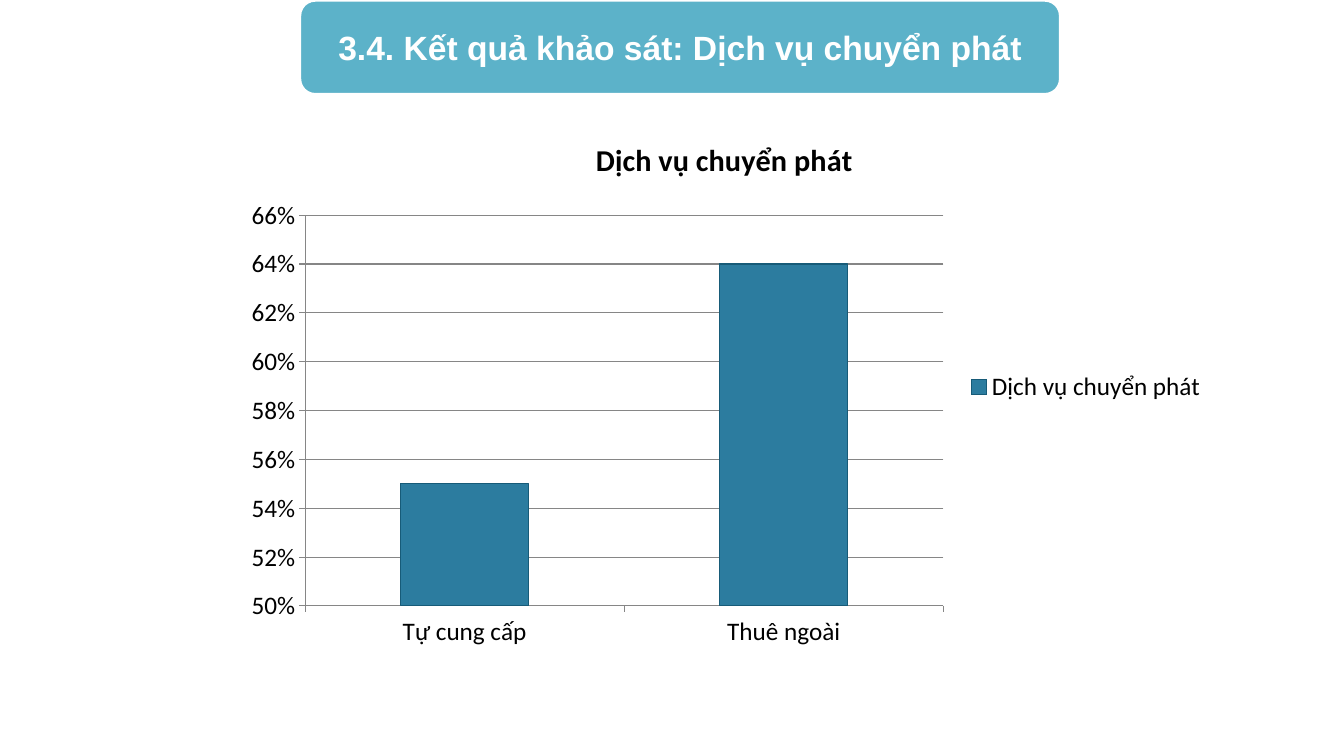
from pptx import Presentation
from pptx.chart.data import CategoryChartData
from pptx.dml.color import RGBColor
from pptx.enum.chart import XL_CHART_TYPE as ChartType, XL_LEGEND_POSITION as LegendPosition
from pptx.enum.chart import XL_TICK_MARK as TickMark
from pptx.enum.shapes import MSO_SHAPE as Shape
from pptx.enum.text import MSO_ANCHOR as Anchor, PP_ALIGN as Align
from pptx.util import Inches, Pt

# Content
HEADING = "3.4. Kết quả khảo sát: Dịch vụ chuyển phát"
SERVICE = "Dịch vụ chuyển phát"
SHARES = {"Tự cung cấp": 0.55, "Thuê ngoài": 0.64}
COLORS = {"banner": "5CB2C9", "white": "FFFFFF", "text": "000000",
          "bar": "2C7C9F", "bar_edge": "175B78", "axis": "868686"}
BANNER_AT = (2.97, 0, 7.55, 0.94)
CHART_AT = (2.3, 1.16, 9.77, 5.36)


def color(name):
    return RGBColor.from_string(COLORS[name])


def set_line(line, name, width):
    line.color.rgb = color(name)
    line.width = Pt(width)


def set_font(font, face, size, name, bold=False):
    font.name, font.size, font.bold = face, Pt(size), bold
    font.color.rgb = color(name)


deck = Presentation()
deck.slide_width, deck.slide_height = Inches(13.33), Inches(7.5)
page = deck.slides.add_slide(deck.slide_layouts[6])

# Heading banner
banner = page.shapes.add_shape(Shape.ROUNDED_RECTANGLE, *map(Inches, BANNER_AT))
banner.shadow.inherit = False
banner.fill.solid()
banner.fill.fore_color.rgb = color("banner")
set_line(banner.line, "white", 2.5)
frame = banner.text_frame
frame.word_wrap = True
frame.vertical_anchor = Anchor.MIDDLE
para = frame.paragraphs[0]
para.alignment = Align.CENTER
span = para.add_run()
span.text = HEADING
set_font(span.font, "Arial", 24, "white", bold=True)

# Column chart
data = CategoryChartData(number_format="0%")
data.categories = list(SHARES)
data.add_series(SERVICE, list(SHARES.values()))
chart = page.shapes.add_chart(ChartType.COLUMN_STACKED, *map(Inches, CHART_AT), data).chart
set_font(chart.font, "Calibri", 18, "text")

# Chart title and legend
chart.has_title = True
title = chart.chart_title.text_frame.paragraphs[0].add_run()
title.text = SERVICE
set_font(title.font, "Calibri", 21.6, "text", bold=True)
chart.has_legend = True
chart.legend.position = LegendPosition.RIGHT
chart.legend.include_in_layout = False

# Bars
plot = chart.plots[0]
plot.gap_width, plot.overlap = 150, 100
plot.vary_by_categories = False
bars = plot.series[0].format
bars.fill.solid()
bars.fill.fore_color.rgb = color("bar")
set_line(bars.line, "bar_edge", 0.75)

# Axes and gridlines
for axis in (chart.category_axis, chart.value_axis):
    axis.major_tick_mark = TickMark.OUTSIDE
    axis.minor_tick_mark = TickMark.NONE
    set_line(axis.format.line, "axis", 0.75)
scale = chart.value_axis
scale.minimum_scale, scale.maximum_scale, scale.major_unit = 0.5, 0.66, 0.02
scale.tick_labels.number_format = "0%"
scale.tick_labels.number_format_is_linked = False
scale.has_major_gridlines = True
set_line(scale.major_gridlines.format.line, "axis", 0.75)

deck.save("out.pptx")
